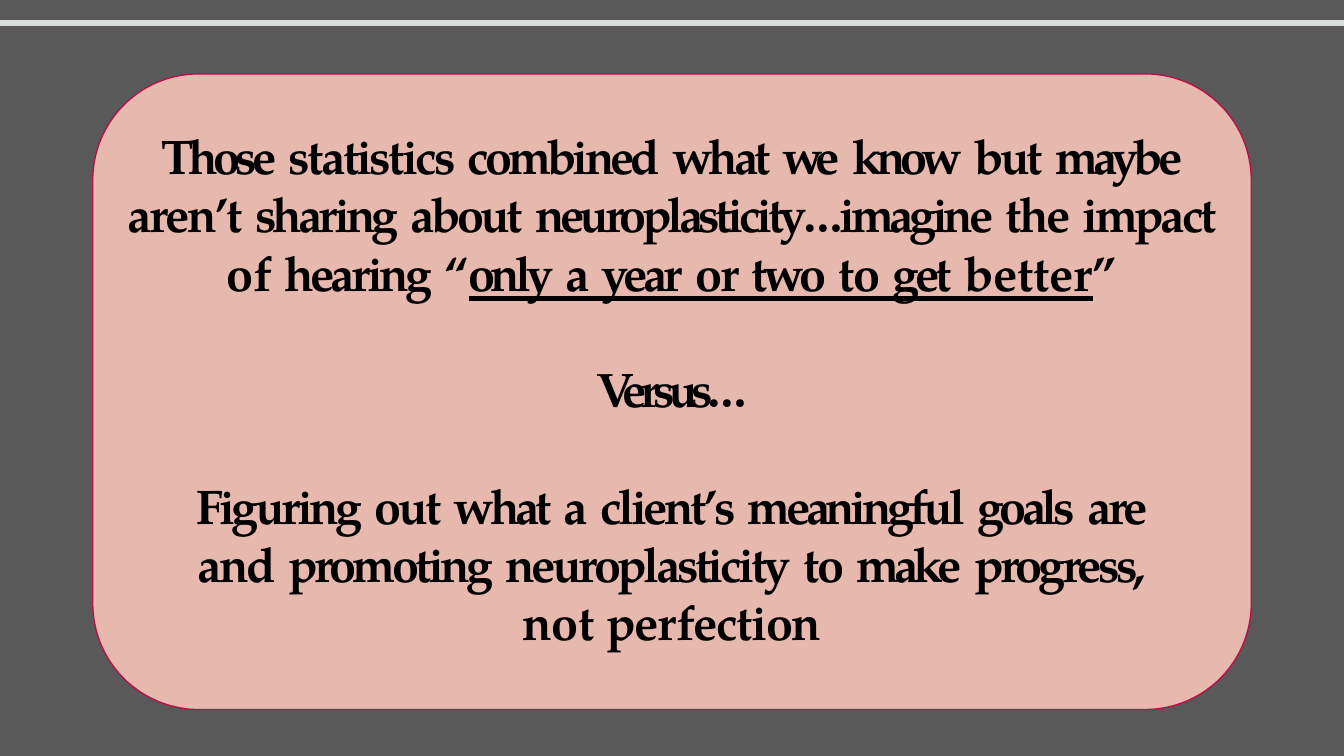
from pptx import Presentation
from pptx import util as u
from pptx.dml.color import RGBColor
from pptx.enum import shapes, text
from pptx.oxml.ns import qn
from lxml import etree

GREY = RGBColor(0x59, 0x59, 0x59)
PINK = RGBColor(0xE6, 0xB8, 0xAE)
CRIMSON = RGBColor(0xB6, 0x12, 0x4A)
SILVER = RGBColor(0xD8, 0xDE, 0xDE)
BLACK = RGBColor(0, 0, 0)
FONT = "TeX Gyre Pagella"
WIDTH = 10
HEIGHT = WIDTH * 9 / 16
GAP_SPACING = -0.3  # letter spacing of the blanks between words, in points

# Each span: words, letter spacing in points
STATISTICS = [
    ("Those ", -2.6), ("statistics ", -1.5), ("combined ", -2.2),
    ("what ", -2.3), ("we ", -3.1), ("know ", -2.9), ("but ", -1.8),
    ("maybe ", -2.7), ("aren’t ", -1.2), ("sharing ", -2.2),
    ("about ", -2), ("neuroplasticity…imagine ", -2.4),
    ("the ", -1.7), ("impact ", -1.7), ("of ", -0.2), ("hearing ", -2.1),
    ("“", -2.6),
]
UNDERLINED = [
    ("only ", -2.6), ("a ", -2.1), ("year ", -2.1), ("or ", -1.1),
    ("two ", -2), ("to ", -0.7), ("get ", -1.9), ("better", -0.1),
]
CLOSING_QUOTE = [("”", -0.1)]
VERSUS = [("Versus…", -3.6)]
GOALS = [
    ("Figuring ", -2), ("out ", -1.6), ("what ", -2.3), ("a ", -2.1),
    ("client’s ", -1.9), ("meaningful ", -2.5), ("goals ", -2.5),
    ("are ", -1.8), ("and ", -1.4), ("promoting ", -2),
    ("neuroplasticity ", -1.9), ("to ", -0.8), ("make ", -2.8),
    ("progress, ", -2), ("not ", -0.2), ("perfection", -0.7),
]


def add_panel(page, kind, left, top, width, height, fill):
    panel = page.shapes.add_shape(kind, u.Inches(left), u.Inches(top),
                                  u.Inches(width), u.Inches(height))
    panel.shadow.inherit = False
    panel.fill.solid()
    panel.fill.fore_color.rgb = fill
    panel.line.fill.background()
    return panel


def add_span(para, words, spacing, underline):
    span = para.add_run()
    span.text = words
    if underline:
        span.font.underline = text.MSO_UNDERLINE.HEAVY_LINE
    span._r.get_or_add_rPr().set("spc", str(round(spacing * 100)))


def add_spans(para, spans, underline=False):
    for words, spacing in spans:
        word = words.rstrip()
        add_span(para, word, spacing, underline)
        if word != words:
            add_span(para, " ", GAP_SPACING, underline)


def style_paragraph(para, indent=0, space_before=None):
    para.alignment = text.PP_ALIGN.CENTER
    if space_before:
        para.space_before = u.Pt(space_before)
    if indent:
        for side in ("marL", "marR"):
            para._p.get_or_add_pPr().set(side, str(u.Inches(indent)))
    para.font.size = u.Pt(26)
    para.font.name = FONT
    para.font.bold = True
    para.font.color.rgb = BLACK


def add_backdrop(page, left, top, width, height):
    # Grey ground
    add_panel(page, shapes.MSO_SHAPE.RECTANGLE, left, top, width, height, GREY)


def add_top_rule(page, left, top, width):
    # Pale rule near the top
    rule = page.shapes.add_connector(
        shapes.MSO_CONNECTOR.STRAIGHT, u.Inches(left), u.Inches(top),
        u.Inches(left + width), u.Inches(top))
    rule.line.color.rgb = SILVER
    rule.line.width = u.Pt(3)
    etree.SubElement(rule._element.spPr, qn("a:effectLst"))


def add_message(page, left, top, width, height):
    # Rounded card
    card = add_panel(page, shapes.MSO_SHAPE.ROUNDED_RECTANGLE,
                     left, top, width, height, PINK)
    card.adjustments[0] = 0.79 / height
    card.line.color.rgb = CRIMSON
    card.line.width = u.Pt(0.75)

    # Text inside the card
    box = page.shapes.add_textbox(u.Inches(left + 0.17), u.Inches(top + 0.38),
                                  u.Inches(width - 0.34), u.Inches(3.93))
    frame = box.text_frame
    frame.word_wrap = True
    frame.margin_left = frame.margin_right = frame.margin_bottom = 0
    frame.margin_top = u.Inches(0.01)

    para = frame.paragraphs[0]
    style_paragraph(para)
    add_spans(para, STATISTICS)
    add_spans(para, UNDERLINED, underline=True)
    add_spans(para, CLOSING_QUOTE)
    for spans, indent in ((VERSUS, 0), (GOALS, 0.39)):
        para = frame.add_paragraph()
        style_paragraph(para, indent, space_before=31.2)
        add_spans(para, spans)


def main():
    deck = Presentation()
    deck.slide_width = u.Inches(WIDTH)
    deck.slide_height = u.Inches(HEIGHT)
    page = deck.slides.add_slide(deck.slide_layouts[6])
    add_backdrop(page, 0, 0, WIDTH, HEIGHT)
    add_message(page, 0.69, 0.55, 8.62, 4.73)
    add_top_rule(page, 0, 0.17, WIDTH)
    deck.save("out.pptx")


if __name__ == "__main__":
    main()
